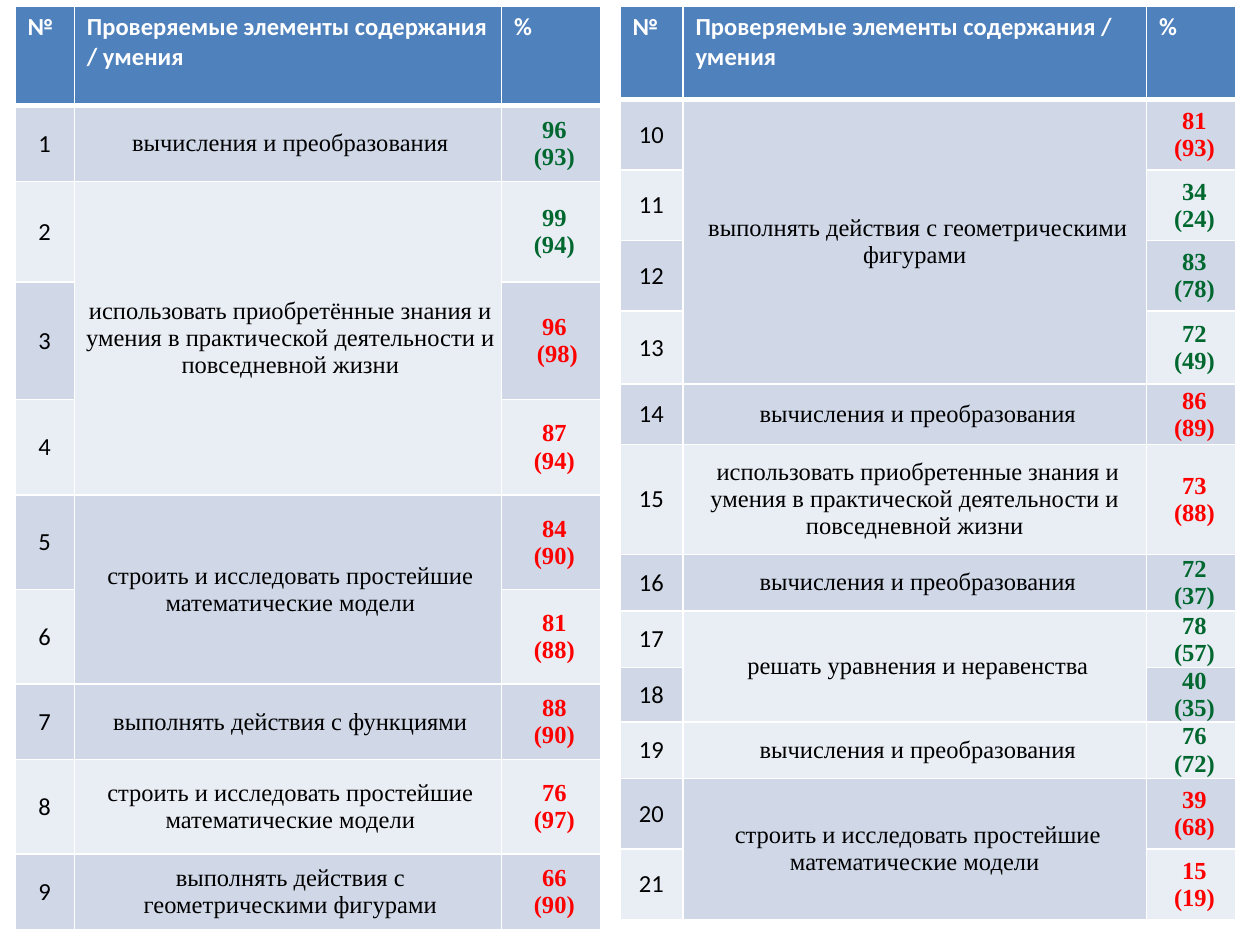
from lxml import etree
from pptx import Presentation
from pptx.dml.color import RGBColor
from pptx.enum import text
from pptx.oxml import ns
from pptx.util import Inches, Pt


def paint(color):
    return RGBColor.from_string(color)


def write(cell, lines, look, align, dents):
    cell.text = "\n".join(lines)
    for para in cell.text_frame.paragraphs:
        para.alignment = align
        for key, size in dents.items():
            para._p.get_or_add_pPr().set(key, str(Inches(size)))
        font = para.runs[0].font
        font.color.rgb = paint(look["color"])
        for key in ("name", "size", "bold"):
            setattr(font, key, look[key])


calc = "вычисления и преобразования"
model = "строить и исследовать простейшие математические модели"
figure = "выполнять действия с геометрическими фигурами"
life = "умения в практической деятельности и повседневной жизни"

tables = [
    dict(left=0.12, first=1, cols=[0.47, 3.39, 0.79], dents={"marL": 0.04},
         rows=[0.79, 0.6, 0.8, 0.93, 0.76, 0.75, 0.75, 0.6, 0.75, 0.6],
         groups=[
             (calc, [(96, "(93)")]),
             ("использовать приобретённые знания и " + life,
              [(99, "(94)"), (96, " (98)"), (87, "(94)")]),
             (model, [(84, "(90)"), (81, "(88)")]),
             ("выполнять действия с функциями", [(88, "(90)")]),
             (model, [(76, "(97)")]),
             (figure, [(66, "(90)")])]),
    dict(left=4.92, first=10, cols=[0.5, 3.68, 0.71], dents={"indent": 0.05},
         rows=[0.74, 0.56, 0.56, 0.56, 0.58, 0.48, 0.87, 0.45, 0.45, 0.38,
               0.45, 0.56, 0.56],
         groups=[
             (figure, [(81, "(93)"), (34, "(24)"), (83, "(78)"), (72, "(49)")]),
             (calc, [(86, "(89)")]),
             ("использовать приобретенные знания и " + life, [(73, "(88)")]),
             (calc, [(72, "(37)")]),
             ("решать уравнения и неравенства", [(78, "(57)"), (40, "(35)")]),
             (calc, [(76, "(72)")]),
             (model, [(39, "(68)"), (15, "(19)")])]),
]

center, middle = text.PP_ALIGN.CENTER, text.MSO_ANCHOR.MIDDLE
head = dict(name="Calibri", size=Pt(14), bold=True, color="FFFFFF")
count = dict(head, bold=False, color="000000")
skill = dict(count, name="Times New Roman")
score = dict(skill, bold=True)
tight = dict(margin_left=Inches(0.04), margin_right=Inches(0.04),
             margin_top=0, margin_bottom=0)

deck = Presentation()
deck.slide_width, deck.slide_height = Inches(10), Inches(7.5)
slide = deck.slides.add_slide(deck.slide_layouts[6])

for data in tables:
    rows, cols = data["rows"], data["cols"]
    grid = slide.shapes.add_table(
        len(rows), 3, Inches(data["left"]), Inches(0.05),
        Inches(sum(cols)), Inches(sum(rows))).table
    for col, width in zip(grid.columns, cols):
        col.width = Inches(width)

    for r, height in enumerate(rows):
        grid.rows[r].height = Inches(height)
        for c in range(3):
            cell = grid.cell(r, c)
            props = cell._tc.get_or_add_tcPr()
            for side in "LRTB":
                thick = (r == 0 and side == "B") or (r == 1 and side == "T")
                line = etree.SubElement(props, ns.qn("a:ln" + side),
                                        w=str(Pt(3 if thick else 1)))
                solid = etree.SubElement(line, ns.qn("a:solidFill"))
                etree.SubElement(solid, ns.qn("a:srgbClr"), val="FFFFFF")
            cell.fill.solid()
            band = "D0D8E8" if r % 2 else "E9EDF4"
            cell.fill.fore_color.rgb = paint(band if r else "4F81BD")
            if r:
                cell.vertical_anchor = middle
                for key, value in (tight if c else {}).items():
                    setattr(cell, key, value)

    titles = ["№", "Проверяемые элементы содержания / умения", "%"]
    for c, title in enumerate(titles):
        write(grid.cell(0, c), [title], head, None, {})

    r = 1
    for name, marks in data["groups"]:
        if len(marks) > 1:
            grid.cell(r, 1).merge(grid.cell(r + len(marks) - 1, 1))
        write(grid.cell(r, 1), [name], skill, center, data["dents"])
        for now, past in marks:
            write(grid.cell(r, 0), [str(data["first"] + r - 1)], count, center, {})
            tone = "00682F" if now > int(past.strip(" ()")) else "FF0000"
            write(grid.cell(r, 2), [str(now), past], dict(score, color=tone),
                  center, {"indent": 0.05})
            r += 1

deck.save("out.pptx")
